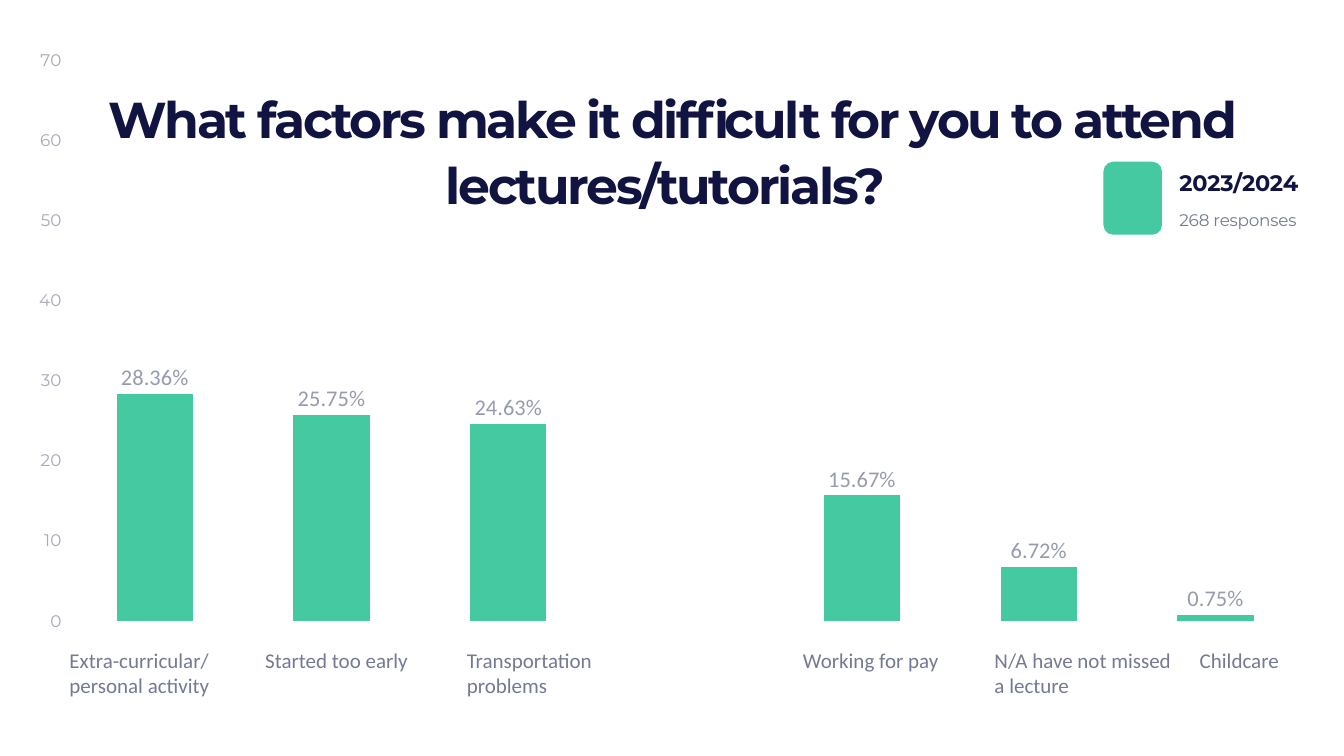
from dataclasses import dataclass

from lxml import etree
from pptx import Presentation, util as u
from pptx.chart import data as chart_data
from pptx.dml import color
from pptx.enum import chart as ch, shapes, text
from pptx.oxml import ns


@dataclass(frozen=True)
class Theme:
    navy: str = "111340"
    slate: str = "747A94"
    value_label: str = "979BAF"
    axis_label: str = "A5A9B9"
    green: str = "45C9A0"
    heading_font: str = "Montserrat"
    body_font: str = "Calibri"
    title_size: int = 72
    large: int = 32
    category_size: int = 30
    small: int = 24


THEME = Theme()

# Factor, percentage, label left edge and label width in cm
FACTORS = [
    ("Extra-curricular/personal activity", 28.36, 3.25, 9.4),
    ("Started too early", 25.75, 13.11, 9.4),
    ("Transportation problems", 24.63, 23.27, 9.4),
    ("", None, None, None),  # empty slot between the two groups of bars
    ("Working for pay", 15.67, 40.21, 9.4),
    ("N/A have not missed a lecture", 6.72, 49.86, 10.06),
    ("Childcare", 0.75, 60.2, 9.4),
]


def place(box):
    return [u.Cm(length) for length in box]


def style_font(font, name, size, rgb, bold=False):
    font.name, font.size, font.bold = name, u.Pt(size), bold
    font.color.rgb = color.RGBColor.from_string(rgb)


def write(shape, words, font, size, rgb, bold=False, spacing=0, leading=None,
          anchor=text.MSO_ANCHOR.TOP, align=text.PP_ALIGN.LEFT):
    frame = shape.text_frame
    frame.text = words
    frame.word_wrap = True
    frame.auto_size = text.MSO_AUTO_SIZE.NONE
    frame.vertical_anchor = anchor
    paragraph = frame.paragraphs[0]
    paragraph.alignment = align
    if leading:
        paragraph.line_spacing = u.Pt(leading)
    for run in paragraph.runs:
        style_font(run.font, font, size, rgb, bold)
        if spacing:
            run.font._element.set("spc", str(round(spacing * 100)))


def fill_green(fill):
    fill.solid()
    fill.fore_color.rgb = color.RGBColor.from_string(THEME.green)


def set_plot_area(chart, **fractions):
    """Fix the inner plot area as fractions of the chart frame."""
    plot_area = chart._chartSpace.chart.plotArea
    for old in plot_area.findall(ns.qn("c:layout")):
        plot_area.remove(old)
    layout = etree.Element(ns.qn("c:layout"))
    manual = etree.SubElement(layout, ns.qn("c:manualLayout"))
    settings = {"layoutTarget": "inner", "xMode": "edge", "yMode": "edge", **fractions}
    for tag, value in settings.items():
        etree.SubElement(manual, ns.qn(f"c:{tag}")).set("val", str(value))
    plot_area.insert(0, layout)


def add_factor_chart(slide, box):
    data = chart_data.CategoryChartData()
    data.categories = [str(number) for number in range(1, len(FACTORS) + 1)]
    data.add_series("Series 1", [share for _, share, _, _ in FACTORS])
    chart = slide.shapes.add_chart(
        ch.XL_CHART_TYPE.COLUMN_CLUSTERED, *place(box), data).chart
    chart.has_legend = chart.has_title = False
    style_font(chart.font, THEME.body_font, 10, THEME.slate)
    set_plot_area(chart, x=0.04, y=0.036, w=0.94, h=0.926)

    # Axes
    chart.category_axis.visible = False
    axis = chart.value_axis
    axis.minimum_scale, axis.maximum_scale, axis.major_unit = 0, 70, 10
    axis.has_major_gridlines = False
    axis.format.line.fill.background()
    style_font(axis.tick_labels.font, THEME.heading_font, THEME.small, THEME.axis_label)

    # Bars and their values
    plot = chart.plots[0]
    plot.gap_width, plot.overlap, plot.vary_by_categories = 132, -17, False
    bars = plot.series[0]
    fill_green(bars.format.fill)
    labels = bars.data_labels
    labels.show_value = True
    labels.position = ch.XL_LABEL_POSITION.OUTSIDE_END
    labels.number_format, labels.number_format_is_linked = '0.00"%"', False
    style_font(labels.font, THEME.body_font, THEME.large, THEME.value_label)


def add_title(slide, box):
    title = slide.shapes.title
    title.left, title.top, title.width, title.height = place(box)
    # The closing space is part of the centred second line
    write(title, "What factors make it difficult for you to attend lectures/tutorials? ",
          THEME.heading_font, THEME.title_size, THEME.navy, bold=True, spacing=-3.3,
          leading=94, anchor=text.MSO_ANCHOR.BOTTOM, align=text.PP_ALIGN.CENTER)


def add_legend(slide, box):
    left, top, width, height = box
    swatch = slide.shapes.add_shape(
        shapes.MSO_SHAPE.ROUNDED_RECTANGLE, *place((left, top, 2.95, height)))
    swatch.shadow.inherit = False
    fill_green(swatch.fill)
    swatch.line.fill.background()

    text_left, text_width = left + 3.58, width - 3.58
    year = slide.shapes.add_textbox(*place((text_left, top + 0.2, text_width, 1.63)))
    write(year, "2023/2024", THEME.heading_font, THEME.large, THEME.navy, bold=True,
          spacing=-0.3, anchor=text.MSO_ANCHOR.BOTTOM)
    responses = slide.shapes.add_textbox(*place((text_left, top + 2.06, text_width, 1.42)))
    write(responses, "268 responses", THEME.heading_font, THEME.small, THEME.slate,
          spacing=-0.3, leading=36)


def add_category_labels(slide, top, height):
    for factor, share, left, width in FACTORS:
        if share is not None:
            label = slide.shapes.add_textbox(*place((left, top, width, height)))
            write(label, factor, THEME.body_font, THEME.category_size, THEME.slate)


def main():
    deck = Presentation()
    deck.slide_width, deck.slide_height = u.Cm(67.72), u.Cm(38.1)
    slide = deck.slides.add_slide(deck.slide_layouts[5])
    add_factor_chart(slide, (0.69, 1.93, 66.34, 30.53))
    add_title(slide, (4.22, 4.19, 59.26, 6.76))
    add_legend(slide, (55.6, 8.15, 16.86, 3.68))
    add_category_labels(slide, top=32.49, height=2.82)
    deck.save("out.pptx")


if __name__ == "__main__":
    main()
